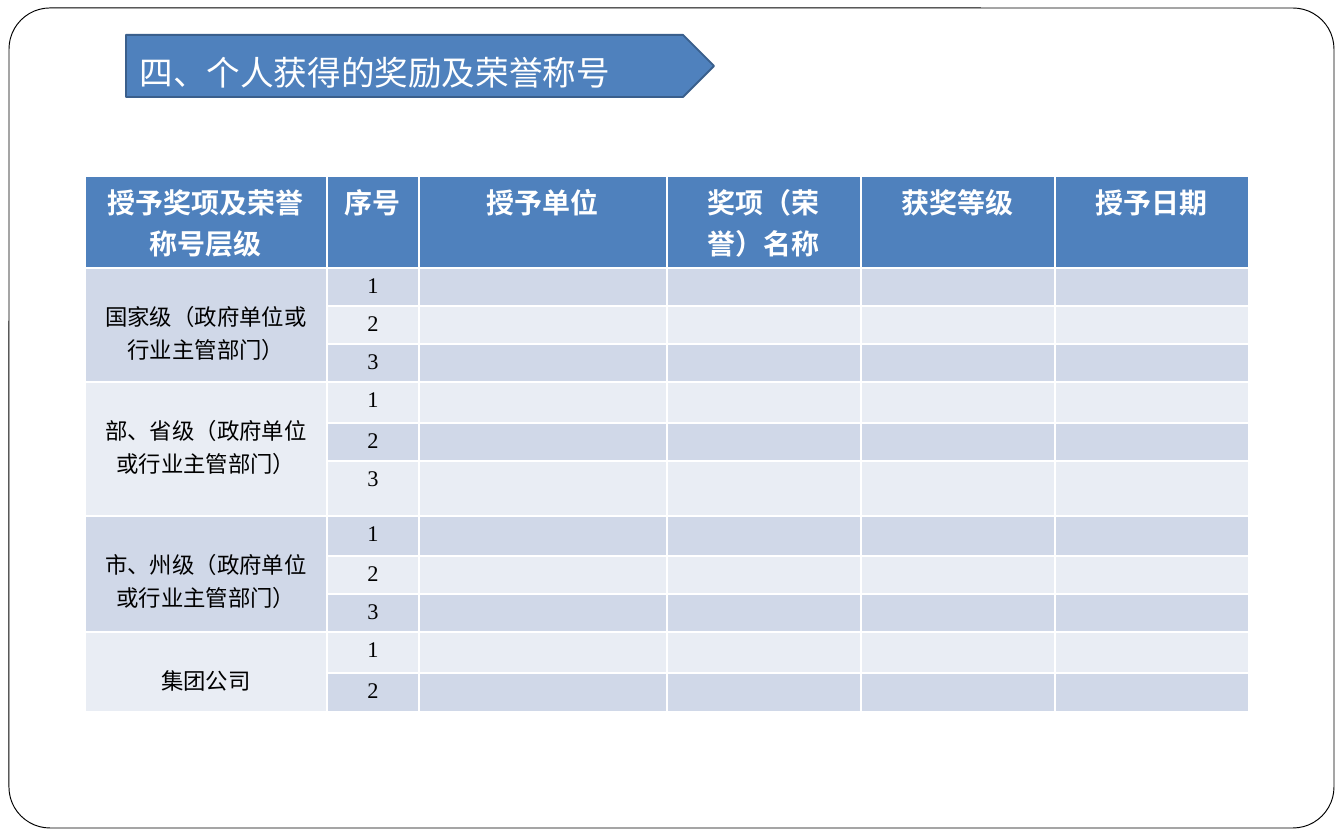
from lxml import etree
from pptx import Presentation
from pptx.dml.color import RGBColor
from pptx.enum.shapes import MSO_SHAPE
from pptx.enum.text import MSO_ANCHOR, PP_ALIGN
from pptx.oxml.ns import qn
from pptx.util import Inches, Pt

CENTER, LEFT = PP_ALIGN.CENTER, PP_ALIGN.LEFT
MIDDLE = MSO_ANCHOR.MIDDLE
ROUNDED = MSO_SHAPE.ROUNDED_RECTANGLE

WHITE = RGBColor(0xFF, 0xFF, 0xFF)
BLACK = RGBColor(0x00, 0x00, 0x00)
BLUE = RGBColor(0x4F, 0x81, 0xBD)
DARK_BLUE = RGBColor(0x3A, 0x5F, 0x8C)
BANDS = [RGBColor(0xD0, 0xD8, 0xE8), RGBColor(0xE9, 0xED, 0xF4)]
FONT = "Times New Roman"

HEADING = "四、个人获得的奖励及荣誉称号"
HEADERS = ["授予奖项及荣誉称号层级", "序号", "授予单位", "奖项（荣誉）名称", "获奖等级", "授予日期"]
LEVELS = [
    ("国家级（政府单位或行业主管部门）", 3),
    ("部、省级（政府单位或行业主管部门）", 3),
    ("市、州级（政府单位或行业主管部门）", 3),
    ("集团公司", 2),
]
COL_WIDTHS = [242, 92, 248, 194, 194, 194]
ROW_HEIGHTS = [91, 38, 38, 38, 41, 38, 55, 40, 38, 38, 41, 39]

HEADING_STYLE = {"size": Pt(18), "name": FONT, "bold": False}
HEADER_STYLE = {"size": Pt(15), "name": FONT, "bold": True}
BODY_STYLE = {"size": Pt(12), "name": FONT, "bold": False}


def px(n):
    return int(n * 914400 / 134.4)


def write(p, text, style, color, align):
    p.alignment = align
    r = p.add_run()
    r.text = text
    for name, value in style.items():
        setattr(r.font, name, value)
    r.font.color.rgb = color


def paint(shape, fill, line, width):
    shape.fill.solid()
    shape.fill.fore_color.rgb = fill
    shape.line.color.rgb = line
    shape.line.width = Pt(width)


def add_frame(s):
    frame = s.shapes.add_shape(ROUNDED, px(9), px(8), px(1325), px(820))
    frame.adjustments[0] = 0.05
    frame.shadow.inherit = False
    paint(frame, WHITE, BLACK, 0.5)
    s.shapes._spTree.insert(2, frame._element)


def add_heading(s):
    title, banner = s.placeholders
    title._element.getparent().remove(title._element)
    banner.left, banner.top, banner.width, banner.height = px(126), px(35), px(588), px(62)
    etree.SubElement(banner._element.spPr, qn("a:prstGeom"), prst="homePlate")
    paint(banner, BLUE, DARK_BLUE, 1)
    tf = banner.text_frame
    tf.vertical_anchor = MIDDLE
    tf.margin_top, tf.margin_bottom = px(13), 0
    write(tf.paragraphs[0], HEADING, HEADING_STYLE, WHITE, LEFT)


def add_awards_table(s):
    table = s.shapes.add_table(len(ROW_HEIGHTS), len(COL_WIDTHS), px(85), px(176),
                               px(sum(COL_WIDTHS)), px(sum(ROW_HEIGHTS))).table
    for col, width in zip(table.columns, COL_WIDTHS):
        col.width = px(width)
    for i, (row, height) in enumerate(zip(table.rows, ROW_HEIGHTS)):
        row.height = px(height)
        for cell in row.cells:
            cell.margin_top = cell.margin_bottom = Inches(0.04)
            cell.fill.solid()
            cell.fill.fore_color.rgb = BANDS[(i - 1) % 2] if i else BLUE
            end = cell.text_frame.paragraphs[0]._p.get_or_add_endParaRPr()
            end.set("sz", "1200")

    def put(row, col, text, style, color):
        write(table.cell(row, col).text_frame.paragraphs[0], text, style, color, CENTER)

    for col, text in enumerate(HEADERS):
        put(0, col, text, HEADER_STYLE, WHITE)
    first = 1
    for level, count in LEVELS:
        put(first, 0, level, BODY_STYLE, BLACK)
        level_cell = table.cell(first, 0)
        level_cell.margin_top = px(32)
        level_cell.merge(table.cell(first + count - 1, 0))
        for n in range(count):
            put(first + n, 1, str(n + 1), BODY_STYLE, BLACK)
        first += count


prs = Presentation()
prs.slide_width, prs.slide_height = Inches(10), Inches(6.25)
s = prs.slides.add_slide(prs.slide_layouts[2])
add_frame(s)
add_heading(s)
add_awards_table(s)
prs.save("out.pptx")
